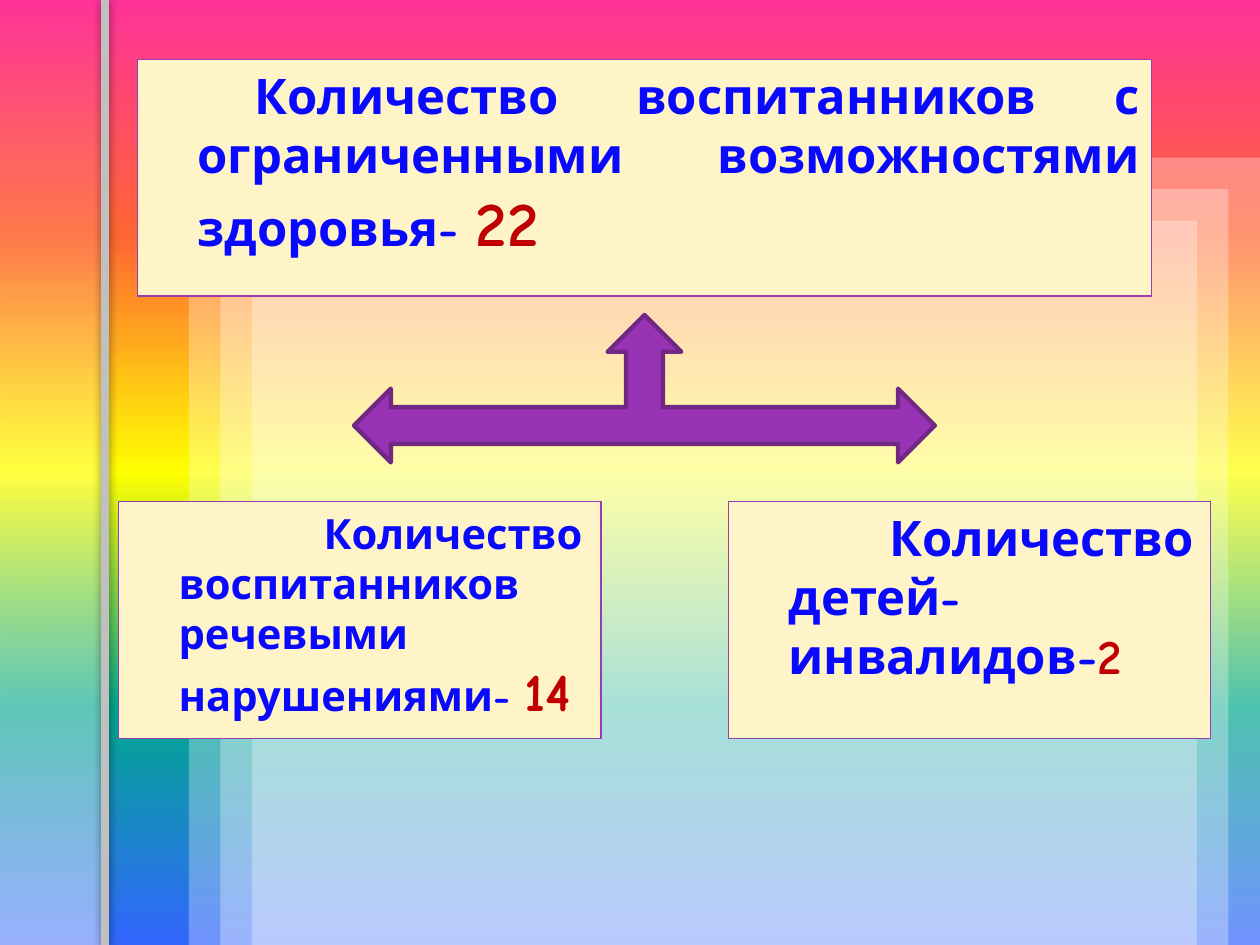
from dataclasses import dataclass

from lxml.etree import SubElement
from pptx import Presentation
from pptx.dml.color import RGBColor
from pptx.enum.shapes import MSO_CONNECTOR, MSO_SHAPE
from pptx.enum.text import MSO_ANCHOR, PP_ALIGN
from pptx.oxml.ns import qn
from pptx.util import Inches, Pt


@dataclass(frozen=True)
class Theme:
    font: str = "Comic Neue"
    text: str = "0909FF"
    number: str = "C00000"
    card: str = "FFF4C8"
    border: str = "983DB1"
    arrow: str = "9933B6"
    arrow_line: str = "702884"
    bar: str = "C0C0C0"
    veil: str = "FFFFFF"
    shadow: str = "000000"
    rainbow: tuple = ((0, "FF3399", 100), (25, "FF6633", 100), (50, "FFFF00", 100),
                      (75, "01A78F", 100), (100, "3366FF", 100))
    body: float = 28
    small: float = 23.8
    big_number: float = 36
    small_number: float = 30.6


def add_color(parent, color, alpha=100):
    clr = SubElement(parent, qn("a:srgbClr"), val=color)
    if alpha < 100:
        SubElement(clr, qn("a:alpha"), val=str(alpha * 1000))


def set_gradient(fill, root, stops, angle):
    fill.gradient()
    grad = next(root.iter(qn("a:gradFill")))
    grad.find(qn("a:lin")).set("ang", str(angle * 60000))
    stop_list = grad.find(qn("a:gsLst"))
    for gs in list(stop_list):
        stop_list.remove(gs)
    for pos, color, alpha in stops:
        gs = SubElement(stop_list, qn("a:gs"), pos=str(pos * 1000))
        add_color(gs, color, alpha)


def add_text(p, text, *, font, size, color, bold=True):
    r = p.add_run()
    r.text = text
    r.font.name = font
    r.font.size = Pt(size)
    r.font.bold = bold
    r.font.color.rgb = RGBColor.from_string(color)


class SlideBuilder:
    def __init__(self, slide, theme):
        self.s = slide
        self.theme = theme

    def background(self):
        set_gradient(self.s.background.fill, self.s._element, self.theme.rainbow, 90)

    def shape(self, kind, x, y, w, h, fill=None, line=None, width=0.75):
        sp = self.s.shapes.add_shape(kind, Inches(x), Inches(y), Inches(w), Inches(h))
        sp.shadow.inherit = False
        if fill:
            sp.fill.solid()
            sp.fill.fore_color.rgb = RGBColor.from_string(fill)
        if line:
            sp.line.color.rgb = RGBColor.from_string(line)
            sp.line.width = Pt(width)
        else:
            sp.line.fill.background()
        return sp

    def veil(self, x, y, w, h):
        sp = self.shape(MSO_SHAPE.RECTANGLE, x, y, w, h, self.theme.veil)
        clr = sp._element.spPr.find(qn("a:solidFill")).find(qn("a:srgbClr"))
        SubElement(clr, qn("a:alpha"), val="30000")

    def side_strip(self, w, h):
        sp = self.shape(MSO_SHAPE.RECTANGLE, 0, 0, w, h)
        stops = ((0, self.theme.veil, 50), (100, self.theme.veil, 0))
        set_gradient(sp.fill, sp._element, stops, 270)

    def bar(self, x, h):
        c = self.s.shapes.add_connector(
            MSO_CONNECTOR.STRAIGHT, Inches(x), Inches(0), Inches(x), Inches(h))
        c.line.color.rgb = RGBColor.from_string(self.theme.bar)
        c.line.width = Pt(4.5)
        effects = SubElement(c._element.spPr, qn("a:effectLst"))
        shadow = SubElement(effects, qn("a:outerShdw"), blurRad=str(Pt(5)), dist="0", dir="0")
        add_color(shadow, self.theme.shadow, 40)

    def card(self, x, y, w, text, number, size, number_size, first_indent):
        t = self.theme
        sp = self.shape(MSO_SHAPE.RECTANGLE, x, y, w, 1.88, t.card, t.border)
        tf = sp.text_frame
        tf.word_wrap = True
        tf.vertical_anchor = MSO_ANCHOR.TOP
        p = tf.paragraphs[0]
        p.alignment = PP_ALIGN.JUSTIFY
        p.space_before = Pt(15)
        pPr = p._p.get_or_add_pPr()
        pPr.set("marL", str(Inches(0.38)))
        pPr.set("indent", str(Inches(first_indent)))
        add_text(p, text, font=t.font, size=size, color=t.text)
        add_text(p, number, font=t.font, size=number_size, color=t.number)

    def arrow(self, x, y, w, h):
        self.shape(MSO_SHAPE.LEFT_RIGHT_UP_ARROW, x, y, w, h,
                   self.theme.arrow, self.theme.arrow_line, 2.5)


def main():
    prs = Presentation()
    prs.slide_width, prs.slide_height = Inches(10), Inches(7.5)
    theme = Theme()
    b = SlideBuilder(prs.slides.add_slide(prs.slide_layouts[6]), theme)

    b.background()
    for i in range(3):
        inset = 0.25 * i
        b.veil(1.5 + inset, 1.25 + inset, 8.5 - 2 * inset, 6.25 - inset)
    b.side_strip(0.85, 7.5)
    b.bar(0.83, 7.5)

    b.card(1.09, 0.47, 8.05,
           "Количество воспитанников с ограниченными возможностями здоровья- ",
           "22", theme.body, theme.big_number, 0.45)
    b.card(0.94, 3.98, 3.83, "Количество воспитанников речевыми нарушениями- ",
           "14", theme.small, theme.small_number, 1.15)
    b.card(5.78, 3.98, 3.83, "Количество детей-инвалидов-",
           "2", theme.body, theme.body, 0.8)
    b.arrow(2.81, 2.5, 4.61, 1.17)

    prs.save("out.pptx")


if __name__ == "__main__":
    main()
